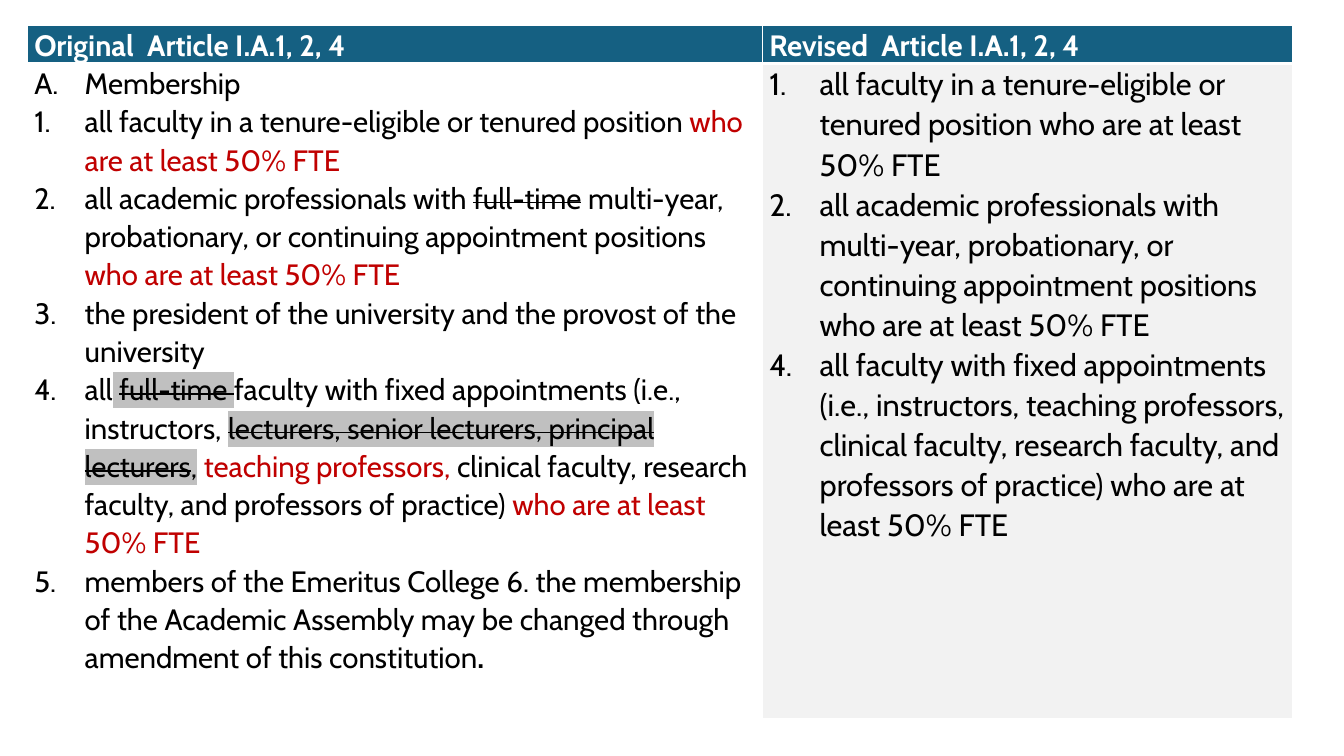
from lxml import etree
from pptx import Presentation
from pptx.dml.color import RGBColor
from pptx.oxml.ns import qn
from pptx.util import Inches, Pt

FONT = "Cabin"
WHITE, BLACK, RED, TEAL = "FFFFFF", "000000", "C00000", "156082"
PALE, SILVER = "F2F2F2", "C0C0C0"
LEFT, TOP = 0.27, 0.25
COL_WIDTHS = [7.29, 5.26]
ROW_HEIGHTS = [0.37, 6.5]

# Run styles
PLAIN = {}
HEAD = {"color": WHITE, "bold": True}
ADDED = {"color": RED}
STRUCK = {"strike": True}
MARKED = {"highlight": SILVER}
CUT = {"strike": True, "highlight": SILVER}

# Paragraph numbering
LETTER, NUMBER, TYPED = "alphaUcPeriod", "arabicPeriod", "typed"

# Each paragraph: numbering, then its runs
ORIGINAL = [
    (LETTER, [("Membership", PLAIN)]),
    (NUMBER, [("all faculty in a tenure-eligible or tenured position ", PLAIN),
              ("who are at least 50% FTE", ADDED)]),
    (NUMBER, [("all academic professionals with ", PLAIN),
              ("full-time", STRUCK),
              (" multi-year, probationary, or continuing appointment positions ", PLAIN),
              ("who are at least 50% FTE", ADDED)]),
    (NUMBER, [("the president of the university and the provost of the university", PLAIN)]),
    (NUMBER, [("all", PLAIN),
              (" ", MARKED),
              ("full-time ", CUT),
              ("faculty with fixed appointments (i.e., instructors, ", PLAIN),
              ("lecturers, senior lecturers, principal lecturers", CUT),
              (",", MARKED),
              (" ", PLAIN),
              ("teaching professors,", ADDED),
              (" clinical faculty, research faculty, and professors of practice) ", PLAIN),
              ("who are at least 50% FTE", ADDED)]),
    (NUMBER, [("members of the Emeritus College 6. the membership of the Academic Assembly "
               "may be changed through amendment of this constitution", PLAIN),
              (".", {"bold": True})]),
]
REVISED = [
    (NUMBER, [("all faculty in a tenure-eligible or tenured position "
               "who are at least 50% FTE", PLAIN)]),
    (NUMBER, [("all academic professionals with multi-year, probationary, or continuing "
               "appointment positions who are at least 50% FTE", PLAIN)]),
    (TYPED, [("4.\tall faculty with fixed appointments (i.e., instructors, teaching professors, "
              "clinical faculty, research faculty, and professors of practice) "
              "who are at least 50% FTE", PLAIN)]),
]

# Each cell: fill, text size, paragraphs
CELLS = [
    [(TEAL, 21, [(None, [("Original  Article I.A.1, 2, 4", HEAD)])]),
     (TEAL, 21, [(None, [("Revised  Article I.A.1, 2, 4", HEAD)])])],
    [(None, 21, ORIGINAL),
     (PALE, 22, REVISED)],
]
HEAD_BOTTOM, THIN = 3, 1


def rgb(hex_color):
    return RGBColor.from_string(hex_color)


def solid_fill(parent, hex_color):
    fill = etree.SubElement(parent, qn("a:solidFill"))
    etree.SubElement(fill, qn("a:srgbClr"), val=hex_color)


def add_run(p, text, size, color=BLACK, bold=False, strike=False, highlight=None):
    r = p.add_run()
    r.text = text
    r.font.name, r.font.size, r.font.bold = FONT, Pt(size), bold
    r.font.color.rgb = rgb(color)
    props = r.font._element
    if strike:
        props.set("strike", "sngStrike")
    if highlight:
        mark = etree.Element(qn("a:highlight"))
        etree.SubElement(mark, qn("a:srgbClr"), val=highlight)
        props.find(qn("a:solidFill")).addnext(mark)


def add_numbering(p, numbering):
    """Give the paragraph a hanging indent and, unless typed, an automatic number."""
    props = p._p.get_or_add_pPr()
    props.set("marL", str(Inches(0.5)))
    props.set("indent", str(-Inches(0.5)))
    if numbering != TYPED:
        etree.SubElement(props, qn("a:buFont"), typeface="+mj-lt")
        etree.SubElement(props, qn("a:buAutoNum"), type=numbering)


def set_borders(cell, bottom, top):
    props = cell._tc.get_or_add_tcPr()
    sides = [("lnL", THIN), ("lnR", THIN), ("lnT", top), ("lnB", bottom)]
    for i, (side, width) in enumerate(sides):
        line = etree.Element(qn("a:" + side), w=str(Pt(width)))
        solid_fill(line, WHITE)
        props.insert(i, line)


def fill_cell(cell, fill, size, paragraphs):
    cell.margin_left = cell.margin_right = Inches(0.07)
    cell.margin_top = cell.margin_bottom = 0
    if fill:
        cell.fill.solid()
        cell.fill.fore_color.rgb = rgb(fill)
    else:
        cell.fill.background()
    tf = cell.text_frame
    for i, (numbering, runs) in enumerate(paragraphs):
        p = tf.add_paragraph() if i else tf.paragraphs[0]
        p.line_spacing = 1.07
        if numbering:
            add_numbering(p, numbering)
        for text, style in runs:
            add_run(p, text, size, **style)


def main():
    prs = Presentation()
    prs.slide_width, prs.slide_height = Inches(13.33), Inches(7.5)
    s = prs.slides.add_slide(prs.slide_layouts[6])
    table = s.shapes.add_table(
        len(ROW_HEIGHTS), len(COL_WIDTHS), Inches(LEFT), Inches(TOP),
        Inches(sum(COL_WIDTHS)), Inches(sum(ROW_HEIGHTS))).table
    table.horz_banding = False
    for col, width in zip(table.columns, COL_WIDTHS):
        col.width = Inches(width)
    for row, height in zip(table.rows, ROW_HEIGHTS):
        row.height = Inches(height)
    for i, row in enumerate(CELLS):
        top, bottom = (HEAD_BOTTOM, THIN) if i else (THIN, HEAD_BOTTOM)
        for j, content in enumerate(row):
            cell = table.cell(i, j)
            fill_cell(cell, *content)
            set_borders(cell, bottom, top)
    prs.save("out.pptx")


if __name__ == "__main__":
    main()
